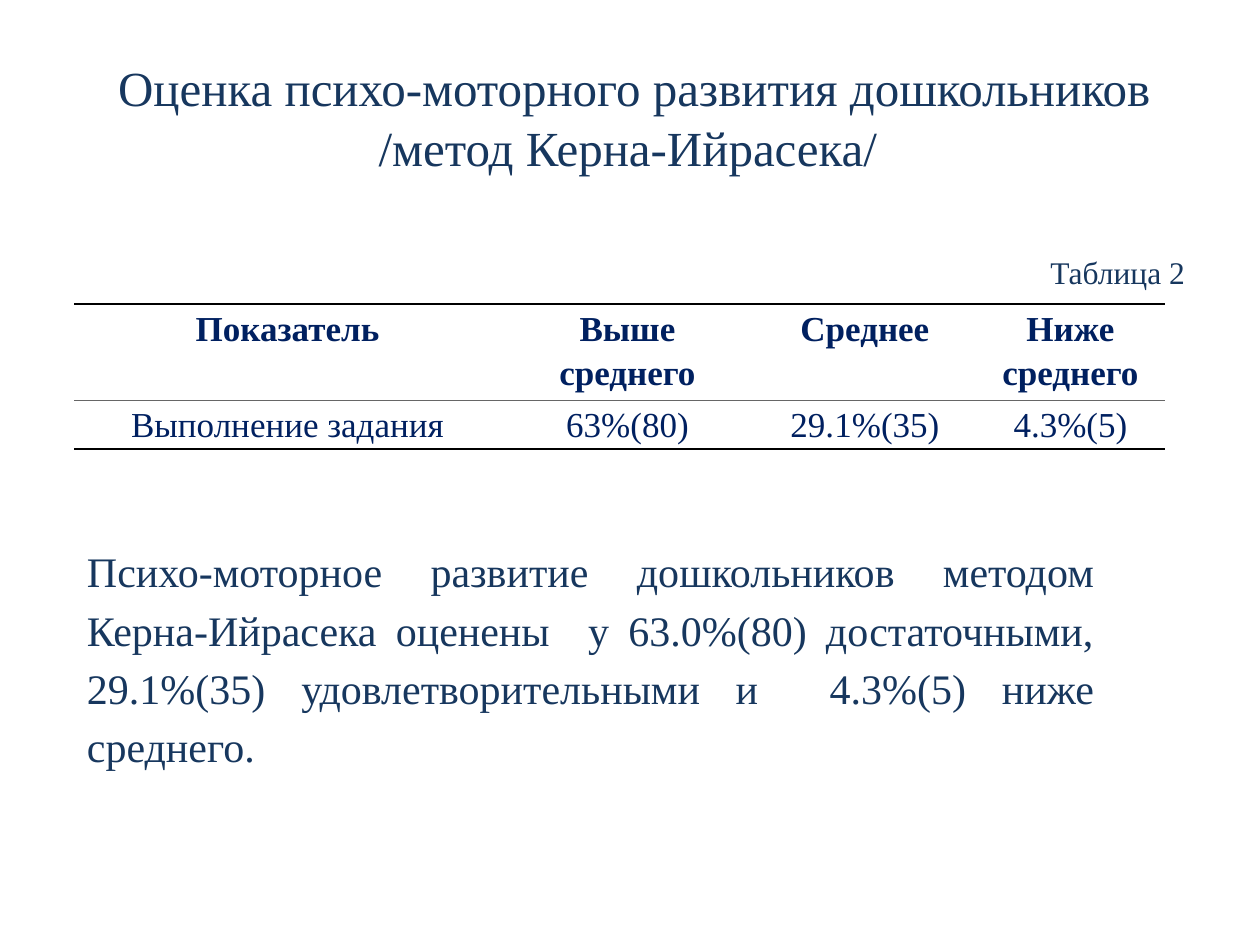
from dataclasses import dataclass
from typing import Any

from lxml import etree
from pptx import Presentation
from pptx import util as u
from pptx.dml.color import RGBColor
from pptx.enum import text
from pptx.oxml.ns import qn

SCALE = 914400 / 126
FONT = "Times New Roman"
NAVY = RGBColor(0x17, 0x37, 0x5E)
INK = RGBColor(0x00, 0x20, 0x60)
WHITE = RGBColor(0xFF, 0xFF, 0xFF)
BLACK = RGBColor(0x00, 0x00, 0x00)
GRAY = RGBColor(0x66, 0x66, 0x66)
NO_STYLE = "{2D5ABB26-0587-4C30-8999-92F81FD0307C}"
ALIGN = text.PP_ALIGN


@dataclass(frozen=True)
class TextBlock:
    left: int
    top: int
    width: int
    height: int
    words: str
    size: int
    align: Any
    spacing: Any


@dataclass(frozen=True)
class TableRow:
    height: int
    cells: tuple[str, ...]
    bold: bool
    top_line: RGBColor
    bottom_line: RGBColor
    filled: bool


BLOCKS = (
    TextBlock(54, 56, 1160, 122,
              "Оценка психо-моторного развития дошкольников\v/метод Керна-Ийрасека/ ",
              28, ALIGN.CENTER, u.Pt(34.3)),
    TextBlock(985, 253, 200, 38, "Таблица 2", 18, ALIGN.RIGHT, 1.0),
    TextBlock(87, 538, 1007, 234,
              "Психо-моторное развитие дошкольников методом Керна-Ийрасека оценены  у "
              "63.0%(80) достаточными, 29.1%(35) удовлетворительными и  4.3%(5) ниже среднего.",
              24, ALIGN.JUSTIFY, u.Pt(33.3)),
)
COLUMNS = (427, 253, 222, 189)
ROWS = (
    TableRow(93, ("Показатель", "Выше среднего", "Среднее", "Ниже среднего"),
             True, BLACK, GRAY, False),
    TableRow(45, ("Выполнение задания", "63%(80)", "29.1%(35)", "4.3%(5)"),
             False, GRAY, BLACK, True),
)


def px(length: int) -> int:
    return round(length * SCALE)


def apply(target: Any, values: dict[str, Any]) -> None:
    for name, value in values.items():
        setattr(target, name, value)


def write(para: Any, words: str, size: int, color: RGBColor, bold: bool,
          layout: dict[str, Any]) -> None:
    apply(para, layout)
    apply(para.font, {"name": FONT, "size": u.Pt(size), "bold": bold})
    para.font.color.rgb = color
    para.text = words
    for span in para.runs:
        apply(span.font, {"name": FONT, "size": u.Pt(size), "bold": bold})
        span.font.color.rgb = color


def draw_block(page: Any, block: TextBlock) -> None:
    box = page.shapes.add_textbox(px(block.left), px(block.top), px(block.width), px(block.height))
    apply(box.text_frame, {"word_wrap": True, "margin_left": 0, "margin_right": 0,
                           "margin_top": 0, "margin_bottom": 0})
    write(box.text_frame.paragraphs[0], block.words, block.size, NAVY, False,
          {"alignment": block.align, "line_spacing": block.spacing})


def draw_borders(cell: Any, top: RGBColor, bottom: RGBColor) -> None:
    properties = cell._tc.get_or_add_tcPr()
    for index, (tag, color) in enumerate((("a:lnT", top), ("a:lnB", bottom))):
        line = etree.Element(qn(tag), w=str(u.Pt(1)))
        fill = etree.SubElement(line, qn("a:solidFill"))
        etree.SubElement(fill, qn("a:srgbClr"), val=str(color))
        properties.insert(index, line)


def draw_cell(cell: Any, words: str, row: TableRow) -> None:
    apply(cell, {"margin_left": px(9), "margin_right": px(9), "margin_top": 0, "margin_bottom": 0})
    if row.filled:
        cell.fill.solid()
        cell.fill.fore_color.rgb = WHITE
    else:
        cell.fill.background()
    draw_borders(cell, row.top_line, row.bottom_line)
    write(cell.text_frame.paragraphs[0], words, 20, INK, row.bold,
          {"alignment": ALIGN.CENTER, "line_spacing": 1.15})


def draw_table(page: Any, left: int, top: int) -> None:
    height = sum(row.height for row in ROWS)
    frame = page.shapes.add_table(len(ROWS), len(COLUMNS), px(left), px(top),
                                  px(sum(COLUMNS)), px(height))
    table = frame.table
    apply(table, {"first_row": False, "horz_banding": False})
    table._tbl.tblPr.find(qn("a:tableStyleId")).text = NO_STYLE
    for column, width in zip(table.columns, COLUMNS):
        column.width = px(width)
    for number, row in enumerate(ROWS):
        table.rows[number].height = px(row.height)
        for cell, words in zip(table.rows[number].cells, row.cells):
            draw_cell(cell, words, row)


def main() -> None:
    deck = Presentation()
    apply(deck, {"slide_width": px(1260), "slide_height": px(945)})
    page = deck.slides.add_slide(deck.slide_layouts[6])
    for block in BLOCKS:
        draw_block(page, block)
    draw_table(page, 74, 304)
    deck.save("out.pptx")


if __name__ == "__main__":
    main()
